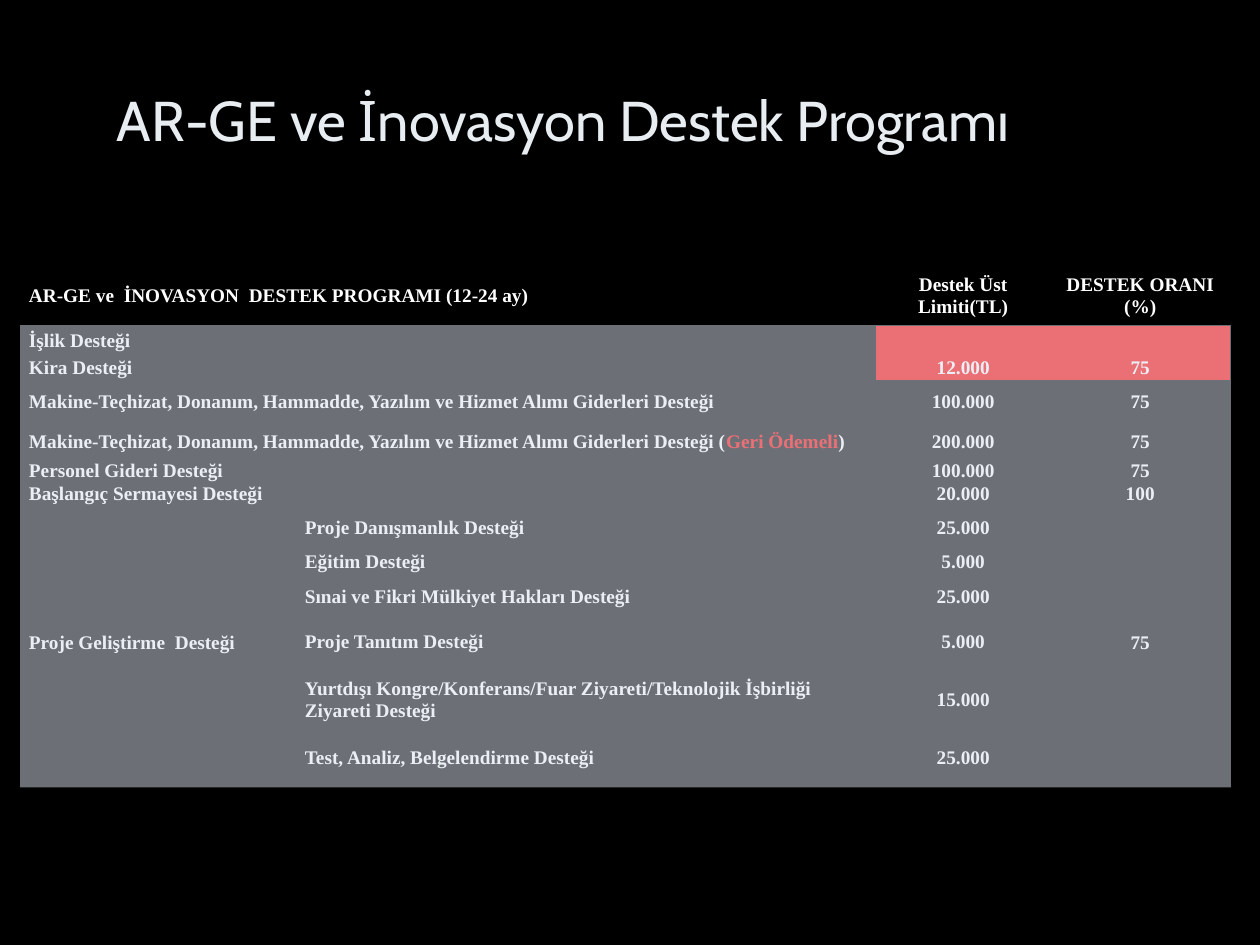
from dataclasses import dataclass

from lxml.etree import SubElement
from pptx import Presentation
from pptx.dml.color import RGBColor
from pptx.enum.shapes import MSO_SHAPE
from pptx.enum.text import MSO_ANCHOR, PP_ALIGN
from pptx.oxml.ns import qn
from pptx.util import Inches, Pt


@dataclass(frozen=True)
class Theme:
    background: RGBColor = RGBColor(0, 0, 0)
    title: RGBColor = RGBColor(0xE8, 0xED, 0xF2)
    text: RGBColor = RGBColor(0xFF, 0xFF, 0xFF)
    accent: RGBColor = RGBColor(0xFF, 0, 0)
    veil: RGBColor = RGBColor(0xD8, 0xE1, 0xEC)
    title_font: str = "Cabin"
    table_font: str = "Times New Roman"
    title_size: int = 32
    table_size: int = 11


@dataclass(frozen=True)
class Support:
    name: str
    limit: str
    rate: str
    height: float
    sub: bool = False  # part of the project development group
    note: str = ""  # accented words in brackets after the name
    red: bool = False


THEME = Theme()
NO_STYLE_NO_GRID = "{2D5ABB26-0587-4C30-8999-92F81FD0307C}"
COLUMNS = (2.19, 4.53, 1.39, 1.42)
GROUP = "Proje Geliştirme  Desteği"
GOODS = "Makine-Teçhizat, Donanım, Hammadde, Yazılım ve Hizmet Alımı Giderleri Desteği"
SUPPORTS = (
    Support("AR-GE ve  İNOVASYON  DESTEK PROGRAMI (12-24 ay)",
            "Destek Üst Limiti(TL)", "DESTEK ORANI (%)", 0.48),
    Support("İşlik Desteği", "", "", 0.24, red=True),
    Support("Kira Desteği", "12.000", "75", 0.12, red=True),
    Support(GOODS, "100.000", "75", 0.36),
    Support(GOODS, "200.000", "75", 0.27, note="Geri Ödemeli"),
    Support("Personel Gideri Desteği", "100.000", "75", 0.12),
    Support("Başlangıç Sermayesi Desteği", "20.000", "100", 0.12),
    Support("Proje Danışmanlık Desteği", "25.000", "75", 0.36, sub=True),
    Support("Eğitim Desteği", "5.000", "", 0.12, sub=True),
    Support("Sınai ve Fikri Mülkiyet Hakları Desteği", "25.000", "", 0.36, sub=True),
    Support("Proje Tanıtım Desteği", "5.000", "", 0.36, sub=True),
    Support("Yurtdışı Kongre/Konferans/Fuar Ziyareti/Teknolojik İşbirliği Ziyareti Desteği",
            "15.000", "", 0.56, sub=True),
    Support("Test, Analiz, Belgelendirme Desteği", "25.000", "", 0.36, sub=True),
)


def add_run(p, text: str, font: str, size: int, color: RGBColor, bold: bool = False) -> None:
    r = p.add_run()
    r.text = text
    r.font.name, r.font.size, r.font.bold = font, Pt(size), bold
    r.font.color.rgb = color


def add_title(s, text: str) -> None:
    sp = s.shapes.add_textbox(Inches(0.83), Inches(0.36), Inches(8.42), Inches(1.17))
    tf = sp.text_frame
    tf.word_wrap = True
    tf.vertical_anchor = MSO_ANCHOR.MIDDLE
    add_run(tf.paragraphs[0], text, THEME.title_font, THEME.title_size, THEME.title)


def clear_cell(cell) -> None:
    cell.margin_left = cell.margin_right = cell.margin_top = cell.margin_bottom = 0
    cell.vertical_anchor = MSO_ANCHOR.MIDDLE
    cell.fill.background()
    # An empty cell keeps the table's type size, so its row does not grow
    end = SubElement(cell.text_frame.paragraphs[0]._p, qn("a:endParaRPr"))
    end.set("sz", str(THEME.table_size * 100))


def write_cell(cell, *parts: tuple[str, RGBColor], centred: bool = False) -> None:
    p = cell.text_frame.paragraphs[0]
    p.alignment = PP_ALIGN.CENTER if centred else PP_ALIGN.LEFT
    for text, color in parts:
        if text:
            add_run(p, text, THEME.table_font, THEME.table_size, color, bold=True)


def add_support_row(table, row: int, item: Support) -> None:
    table.rows[row].height = Inches(item.height)
    name, limit, rate = (table.cell(row, c) for c in (int(item.sub), 2, 3))
    if not item.sub:
        name.merge(table.cell(row, 1))
    if item.note:
        write_cell(name, (item.name + " (", THEME.text), (item.note, THEME.accent),
                   (")", THEME.text))
    else:
        write_cell(name, (item.name, THEME.text))
    for cell, text in ((limit, item.limit), (rate, item.rate)):
        write_cell(cell, (text, THEME.text), centred=True)
        if item.red:
            cell.fill.solid()
            cell.fill.fore_color.rgb = THEME.accent
    if not item.limit:
        limit.merge(rate)


def add_support_table(s) -> None:
    frame = s.shapes.add_table(len(SUPPORTS), len(COLUMNS), Inches(0.23), Inches(2.11),
                               Inches(sum(COLUMNS)),
                               Inches(sum(item.height for item in SUPPORTS)))
    table = frame.table
    table.first_row = table.horz_banding = False
    table._tbl.tblPr.find(qn("a:tableStyleId")).text = NO_STYLE_NO_GRID
    for column, width in zip(table.columns, COLUMNS):
        column.width = Inches(width)
    for cell in table.iter_cells():
        clear_cell(cell)
    for row, item in enumerate(SUPPORTS):
        add_support_row(table, row, item)

    # Group label and shared rate span all the project development rows
    first = next(i for i, item in enumerate(SUPPORTS) if item.sub)
    for col in (0, 3):
        table.cell(first, col).merge(table.cell(len(SUPPORTS) - 1, col))
    write_cell(table.cell(first, 0), (GROUP, THEME.text))


def add_veil(s) -> None:
    sp = s.shapes.add_shape(MSO_SHAPE.RECTANGLE, Inches(0.16), Inches(2.58),
                            Inches(9.61), Inches(3.67))
    sp.shadow.inherit = False
    sp.line.fill.background()
    sp.fill.solid()
    sp.fill.fore_color.rgb = THEME.veil
    color = sp._element.spPr.find(qn("a:solidFill"))[0]
    SubElement(color, qn("a:alpha")).set("val", "50000")


def main() -> None:
    prs = Presentation()
    prs.slide_width, prs.slide_height = Inches(10), Inches(7.5)
    s = prs.slides.add_slide(prs.slide_layouts[6])
    s.background.fill.solid()
    s.background.fill.fore_color.rgb = THEME.background

    add_title(s, "AR-GE ve İnovasyon Destek Programı")
    add_support_table(s)
    add_veil(s)  # half-transparent, over the table body
    prs.save("out.pptx")


if __name__ == "__main__":
    main()
